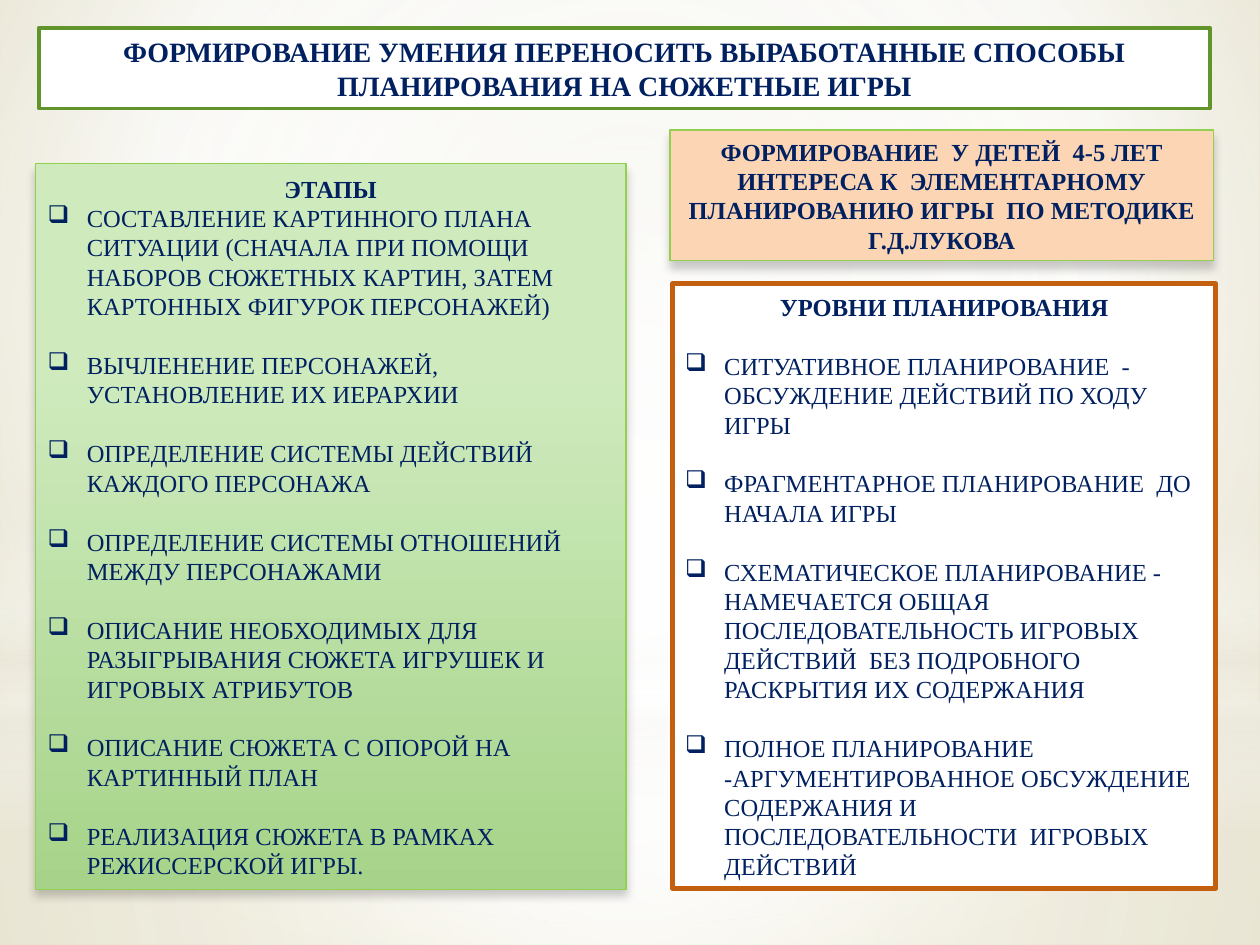
from lxml.etree import SubElement
from pptx import Presentation
from pptx.dml.color import RGBColor
from pptx.enum.shapes import MSO_SHAPE
from pptx.enum.text import MSO_ANCHOR, PP_ALIGN
from pptx.oxml.ns import qn
from pptx.util import Cm, Pt

COLORS = {
    "navy": "002060", "white": "FFFFFF", "cream": "EEECE1", "ivory": "E7E4D4",
    "sand": "D5CC9F", "peach": "FCD5B5", "lime": "92D050", "olive": "61942A",
    "rust": "C26010", "mint": "CFEBBE", "leaf": "A6D389", "black": "000000",
}
WIDTH, HEIGHT = 25.4, 19.05
HORIZON = 14.17
CENTER = (50, 50, 50, 50)
LINE_GAP = Pt(16.8)
HANGING = Cm(0.79)

BACKDROP = {"stops": [(0, "ivory", 100), (60, "white", 100), (100, "sand", 100)],
            "focus": (20, 10, 20, 60)}
GLOWS = [
    (MSO_SHAPE.RECTANGLE, (0, HORIZON, WIDTH, HEIGHT - HORIZON),
     {"stops": [(0, "white", 91), (37, "white", 76), (100, "cream", 79)], "focus": CENTER}),
    (MSO_SHAPE.RECTANGLE, (0, 0, WIDTH, HORIZON),
     {"stops": [(0, "white", 89), (48, "white", 62), (100, "cream", 79)], "focus": CENTER}),
    (MSO_SHAPE.RECTANGLE, (0, 10.46, WIDTH, 6.35),
     {"stops": [(0, "white", 0), (29, "white", 30), (45, "cream", 40),
                (55, "white", 26), (65, "cream", 60), (100, "white", 0)]}),
    (MSO_SHAPE.OVAL, (0, 4.45, WIDTH, HORIZON),
     {"stops": [(0, "white", 100), (56, "white", 0)], "focus": CENTER}),
]

PANELS = [
    {"box": (13.51, 2.62, 10.95, 2.64), "fill": "peach", "line": ("lime", 0.75),
     "shadow": True, "size": 14,
     "heading": "ФОРМИРОВАНИЕ  У ДЕТЕЙ  4-5 ЛЕТ ИНТЕРЕСА К  ЭЛЕМЕНТАРНОМУ "
                "ПЛАНИРОВАНИЮ ИГРЫ  ПО МЕТОДИКЕ Г.Д.ЛУКОВА"},
    {"box": (0.79, 0.56, 23.6, 1.63), "fill": "white", "line": ("olive", 2.25), "size": 16,
     "heading": "ФОРМИРОВАНИЕ УМЕНИЯ ПЕРЕНОСИТЬ ВЫРАБОТАННЫЕ СПОСОБЫ "
                "ПЛАНИРОВАНИЯ НА СЮЖЕТНЫЕ ИГРЫ"},
    {"box": (0.71, 3.3, 11.91, 14.63), "line": ("lime", 0.75), "shadow": True, "size": 14,
     "fill": {"stops": [(28, "mint", 100), (100, "leaf", 100)]},
     "heading": "ЭТАПЫ",
     "items": [
         "СОСТАВЛЕНИЕ КАРТИННОГО ПЛАНА СИТУАЦИИ (СНАЧАЛА ПРИ ПОМОЩИ НАБОРОВ "
         "СЮЖЕТНЫХ КАРТИН, ЗАТЕМ КАРТОННЫХ ФИГУРОК ПЕРСОНАЖЕЙ)",
         "ВЫЧЛЕНЕНИЕ ПЕРСОНАЖЕЙ, УСТАНОВЛЕНИЕ ИХ ИЕРАРХИИ",
         "ОПРЕДЕЛЕНИЕ СИСТЕМЫ ДЕЙСТВИЙ КАЖДОГО ПЕРСОНАЖА",
         "ОПРЕДЕЛЕНИЕ СИСТЕМЫ ОТНОШЕНИЙ МЕЖДУ ПЕРСОНАЖАМИ",
         "ОПИСАНИЕ НЕОБХОДИМЫХ ДЛЯ РАЗЫГРЫВАНИЯ СЮЖЕТА ИГРУШЕК И ИГРОВЫХ АТРИБУТОВ",
         "ОПИСАНИЕ СЮЖЕТА С ОПОРОЙ НА КАРТИННЫЙ ПЛАН",
         "РЕАЛИЗАЦИЯ СЮЖЕТА В РАМКАХ РЕЖИССЕРСКОЙ ИГРЫ.",
     ]},
    {"box": (13.56, 5.72, 10.95, 12.19), "fill": "white", "line": ("rust", 3), "size": 14,
     "heading": "УРОВНИ ПЛАНИРОВАНИЯ", "heading_gap": LINE_GAP,
     "items": [
         "СИТУАТИВНОЕ ПЛАНИРОВАНИЕ  - ОБСУЖДЕНИЕ ДЕЙСТВИЙ ПО ХОДУ ИГРЫ",
         "ФРАГМЕНТАРНОЕ ПЛАНИРОВАНИЕ  ДО НАЧАЛА ИГРЫ",
         "СХЕМАТИЧЕСКОЕ ПЛАНИРОВАНИЕ - НАМЕЧАЕТСЯ ОБЩАЯ ПОСЛЕДОВАТЕЛЬНОСТЬ "
         "ИГРОВЫХ ДЕЙСТВИЙ  БЕЗ ПОДРОБНОГО РАСКРЫТИЯ ИХ СОДЕРЖАНИЯ",
         "ПОЛНОЕ ПЛАНИРОВАНИЕ  -АРГУМЕНТИРОВАННОЕ ОБСУЖДЕНИЕ СОДЕРЖАНИЯ И "
         "ПОСЛЕДОВАТЕЛЬНОСТИ  ИГРОВЫХ ДЕЙСТВИЙ",
     ]},
]


def rgb(name):
    return RGBColor.from_string(COLORS[name])


def add_color(parent, name, opacity):
    color = SubElement(parent, qn("a:srgbClr"), val=COLORS[name])
    if opacity < 100:
        SubElement(color, qn("a:alpha"), val=str(opacity * 1000))


def set_gradient(owner, fill, gradient):
    fill.gradient()
    grad = owner.xpath(".//a:gradFill")[0]
    for child in list(grad):
        grad.remove(child)
    stops = SubElement(grad, qn("a:gsLst"))
    for position, name, opacity in gradient["stops"]:
        add_color(SubElement(stops, qn("a:gs"), pos=str(position * 1000)), name, opacity)
    if "focus" in gradient:
        circle = SubElement(grad, qn("a:path"), {"path": "circle"})
        sides = {side: str(share * 1000) for side, share in zip("ltrb", gradient["focus"])}
        SubElement(circle, qn("a:fillToRect"), sides)
    else:
        SubElement(grad, qn("a:lin"), ang="5400000", scaled="0")


def add_block(slide, kind, box, fill):
    block = slide.shapes.add_shape(kind, *map(Cm, box))
    block.shadow.inherit = False
    block.line.fill.background()
    if isinstance(fill, dict):
        set_gradient(block.element, block.fill, fill)
    else:
        block.fill.solid()
        block.fill.fore_color.rgb = rgb(fill)
    return block


def add_shadow(block):
    effects = block.element.spPr.find(qn("a:effectLst"))
    shadow = SubElement(effects, qn("a:outerShdw"), blurRad=str(Pt(5)), dist=str(Pt(4)),
                        dir="5400000", rotWithShape="0")
    add_color(shadow, "black", 20)


def write(paragraph, text, size, bold, **layout):
    run = paragraph.add_run()
    run.text = text
    font = {"name": "Times New Roman", "size": Pt(size), "bold": bold}
    for target, values in ((run.font, font), (paragraph, layout)):
        for attribute, value in values.items():
            setattr(target, attribute, value)
    run.font.color.rgb = rgb("navy")


def add_panel(slide, panel):
    block = add_block(slide, MSO_SHAPE.RECTANGLE, panel["box"], panel["fill"])
    line_color, line_width = panel["line"]
    block.line.color.rgb = rgb(line_color)
    block.line.width = Pt(line_width)
    if panel.get("shadow"):
        add_shadow(block)
    frame = block.text_frame
    frame.word_wrap = True
    frame.vertical_anchor = MSO_ANCHOR.MIDDLE
    write(frame.paragraphs[0], panel["heading"], panel["size"], True,
          alignment=PP_ALIGN.CENTER)
    gap = panel.get("heading_gap", 0)
    for item in panel.get("items", []):
        paragraph = frame.add_paragraph()
        write(paragraph, item, panel["size"], False,
              alignment=PP_ALIGN.LEFT, space_before=gap)
        properties = paragraph._p.get_or_add_pPr()
        properties.set("marL", str(HANGING))
        properties.set("indent", str(-HANGING))
        SubElement(properties, qn("a:buChar"), char="❑")
        gap = LINE_GAP


def main():
    deck = Presentation()
    deck.slide_width, deck.slide_height = Cm(WIDTH), Cm(HEIGHT)
    slide = deck.slides.add_slide(deck.slide_layouts[6])
    set_gradient(slide.element, slide.background.fill, BACKDROP)
    for kind, box, gradient in GLOWS:
        add_block(slide, kind, box, gradient)
    for panel in PANELS:
        add_panel(slide, panel)
    deck.save("out.pptx")


if __name__ == "__main__":
    main()
